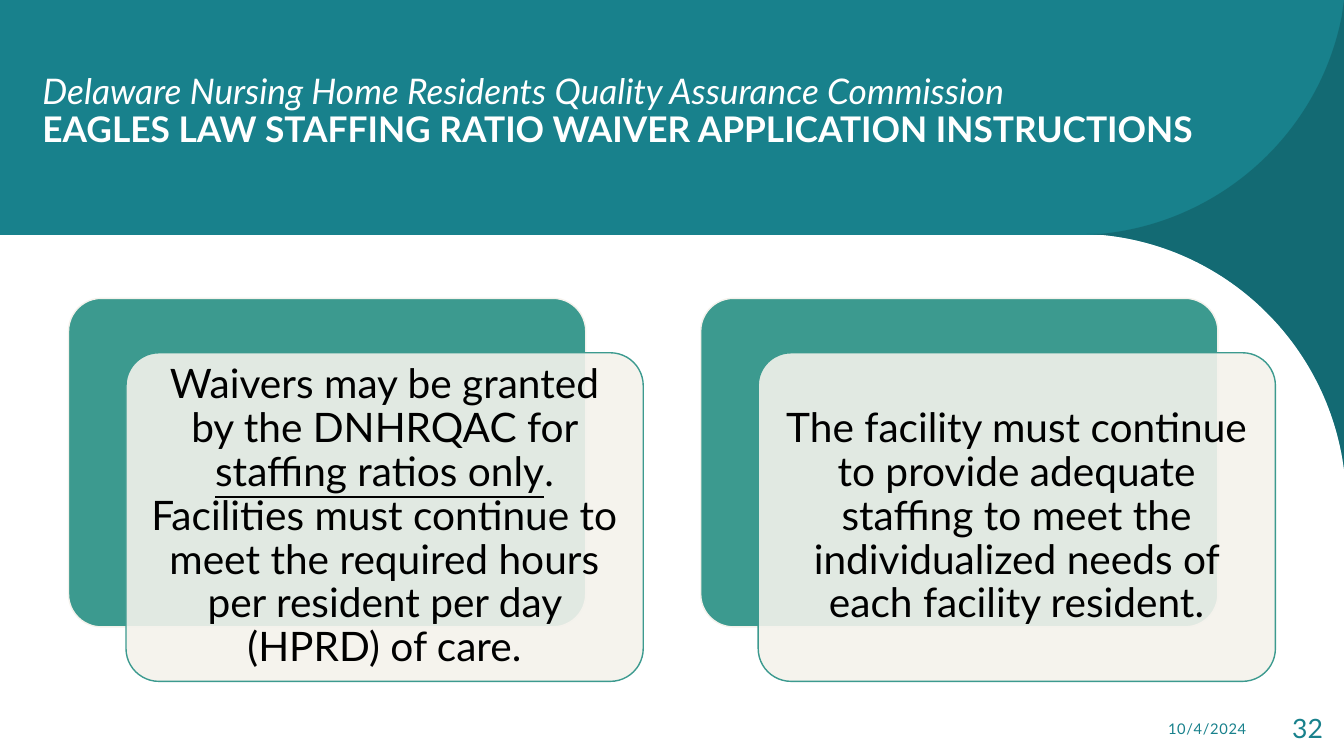
import pptx
import pptx.util
import pptx.dml.color
import pptx.enum.shapes
import pptx.enum.text
import pptx.oxml.ns
import lxml.etree

Inches = pptx.util.Inches
Pt = pptx.util.Pt
qn = pptx.oxml.ns.qn
SHAPE = pptx.enum.shapes.MSO_SHAPE
ALIGN = pptx.enum.text.PP_ALIGN
ANCHOR = pptx.enum.text.MSO_ANCHOR
COLORS = {"teal": "18818C", "deep": "126169", "green": "3C9A8F",
          "cream": "F4F2EC", "white": "FFFFFF", "black": "000000"}


def paint(shape, fill, opacity=100, line=None):
    shape.shadow.inherit = False
    shape.fill.solid()
    shape.fill.fore_color.rgb = pptx.dml.color.RGBColor.from_string(COLORS[fill])
    if opacity < 100:
        color = shape.fill._xPr.find(".//" + qn("a:srgbClr"))
        alpha = lxml.etree.SubElement(color, qn("a:alpha"))
        alpha.set("val", str(opacity * 1000))
    if line:
        shape.line.color.rgb = pptx.dml.color.RGBColor.from_string(COLORS[line])
        shape.line.width = Pt(1)
    else:
        shape.line.fill.background()


def add_run(paragraph, text, size, color, bold=False, italic=False, underline=False):
    run = paragraph.add_run()
    run.text = text
    run.font.name = "Lato"
    run.font.size = Pt(size)
    run.font.bold = bold
    run.font.italic = italic
    run.font.underline = underline
    run.font.color.rgb = pptx.dml.color.RGBColor.from_string(COLORS[color])
    return run


deck = pptx.Presentation()
deck.slide_width = Inches(13.33)
deck.slide_height = Inches(7.5)
slide = deck.slides.add_slide(deck.slide_layouts[5])

band = slide.shapes.add_shape(SHAPE.RECTANGLE, 0, 0, Inches(13.35), Inches(2.33))
paint(band, "teal")

CORNER_LEFT = 1078
corner_points = [(1333, 0), (1331, 15), (1093, 232), (1078, 232),
                 (1093, 233), (1334, 473), (1335, 480)]
corner_controls = {1: [(1309, 131), (1212, 220)], 4: [(1220, 245), (1321, 346)]}
for fill, opacity in [("teal", 100), ("deep", 70)]:
    builder = slide.shapes.build_freeform(1335, 0, scale=Inches(0.01))
    builder.add_line_segments(corner_points, close=True)
    corner = builder.convert_to_shape()
    segments = list(corner._element.iter(qn("a:lnTo")))
    for start, controls in corner_controls.items():
        segment = segments[start + 1]
        segment.tag = qn("a:cubicBezTo")
        for position, (x, y) in enumerate(controls):
            control = lxml.etree.Element(qn("a:pt"))
            control.set("x", str(x - CORNER_LEFT))
            control.set("y", str(y))
            segment.insert(position, control)
    paint(corner, fill, opacity)

footer = [
    ("10/4/2024", 10.20, 2.26, 10.5, 50),
    ("32", 12.46, 0.76, 19, 0),
]
for text, left, width, size, spacing in footer:
    label = slide.shapes.add_textbox(Inches(left), Inches(7.04), Inches(width), Inches(0.4))
    label.text_frame.word_wrap = True
    label.text_frame.vertical_anchor = ANCHOR.MIDDLE
    paragraph = label.text_frame.paragraphs[0]
    paragraph.alignment = ALIGN.RIGHT
    paragraph.line_spacing = 0.9
    run = add_run(paragraph, text, size, "teal")
    if spacing:
        run.font._element.set("spc", str(spacing))

cards = [
    [("Waivers may be granted by the DNHRQAC for ", False),
     ("staffing ratios only", True),
     (". Facilities must continue to meet the required hours per resident per day "
      "(HPRD) of care.", False)],
    [("The facility must continue to provide adequate staffing to meet the "
      "individualized needs of each facility resident.", False)],
]
CARD_LAYERS = [(0, 0, "green", 100, "cream"), (0.57, 0.54, "cream", 90, "green")]
for index, statement in enumerate(cards):
    for dx, dy, fill, opacity, line in CARD_LAYERS:
        card = slide.shapes.add_shape(
            SHAPE.ROUNDED_RECTANGLE, Inches(0.68 + index * 6.27 + dx), Inches(2.96 + dy),
            Inches(5.13), Inches(3.26))
        card.adjustments[0] = 0.1
        paint(card, fill, opacity, line)
    frame = card.text_frame
    frame.word_wrap = True
    frame.vertical_anchor = ANCHOR.MIDDLE
    frame.margin_left = frame.margin_right = Inches(0.12)
    frame.margin_top = frame.margin_bottom = Inches(0.12)
    paragraph = frame.paragraphs[0]
    paragraph.alignment = ALIGN.CENTER
    paragraph.line_spacing = 0.9
    for text, underline in statement:
        add_run(paragraph, text, 29, "black", underline=underline)

title = slide.shapes.title
title.left, title.top = Inches(0.32), Inches(0.71)
title.width, title.height = Inches(12.35), Inches(1.21)
title.text_frame.word_wrap = True
title.text_frame.auto_size = pptx.enum.text.MSO_AUTO_SIZE.NONE
title.text_frame.vertical_anchor = ANCHOR.TOP
title.text_frame.margin_top = Inches(0.02)
heading = title.text_frame.paragraphs[0]
heading.alignment = ALIGN.LEFT
heading.line_spacing = 0.9
add_run(heading, "Delaware Nursing Home Residents Quality Assurance Commission",
        25.2, "white", italic=True)
heading.add_line_break()
add_run(heading, "EAGLES LAW STAFFING RATIO WAIVER APPLICATION INSTRUCTIONS",
        25.2, "white", bold=True)
slide.shapes._spTree.append(title._element)

deck.save("out.pptx")
